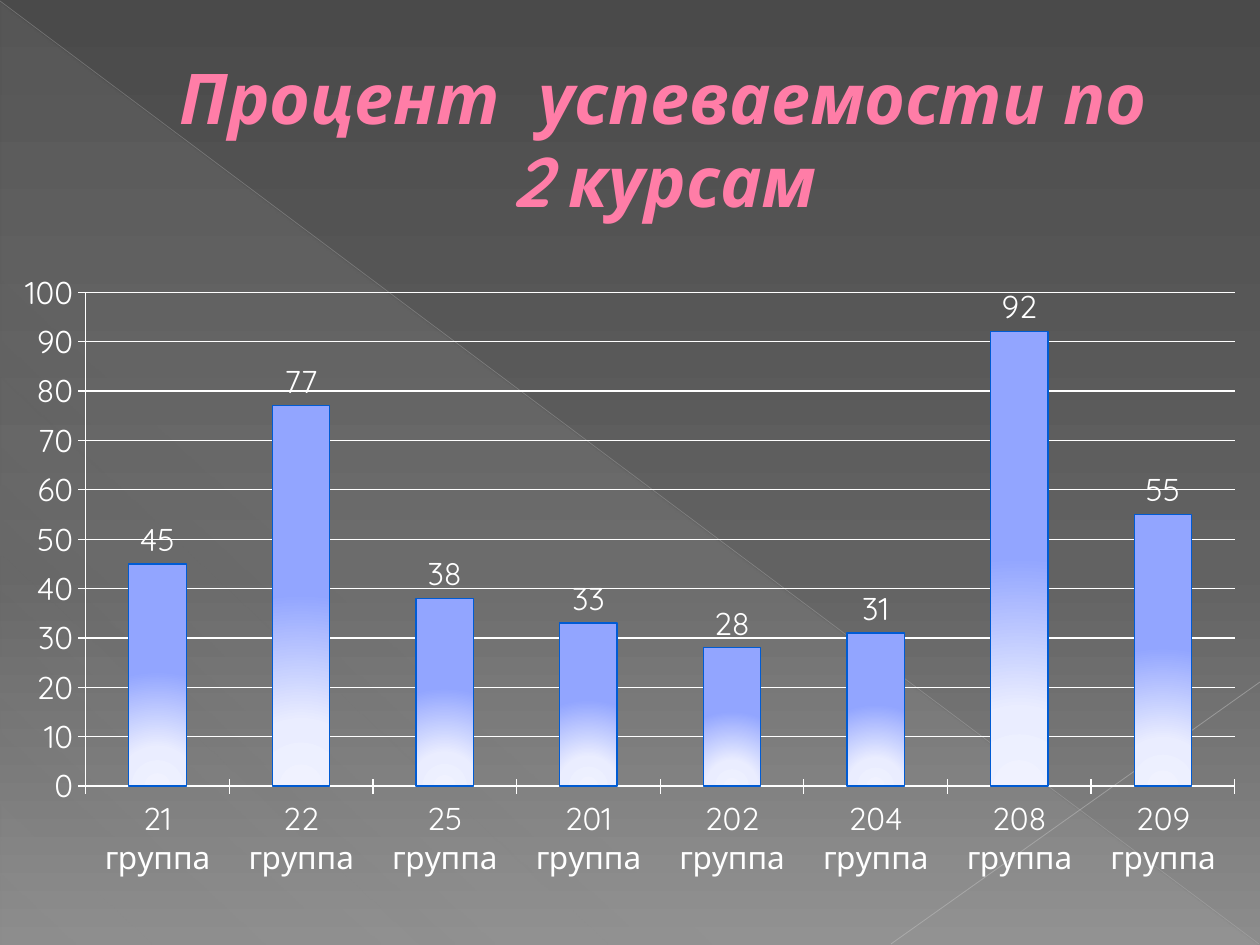
from lxml.etree import SubElement as Sub
from pptx import Presentation
from pptx.chart.data import CategoryChartData as Data
from pptx.dml.color import RGBColor
from pptx.enum.chart import XL_CHART_TYPE as Kind, XL_LABEL_POSITION as Place, XL_TICK_MARK as Tick
from pptx.enum.shapes import MSO_CONNECTOR as Link, MSO_SHAPE as Form
from pptx.enum.text import MSO_ANCHOR as Anchor, PP_ALIGN as Align
from pptx.oxml.ns import qn
from pptx.util import Pt

SCALE = 914400 / 126
FONT = "Quicksand"
WHITE = "FFFFFF"
MARKS = {"21": 45, "22": 77, "25": 38, "201": 33, "202": 28, "204": 31, "208": 92, "209": 55}


def px(*nums):
    return [round(n * SCALE) for n in nums]


def rgb(code):
    return RGBColor.from_string(code)


def style(item, form):
    for name, value in form.items():
        setattr(item, name, value)


def tint(parent, code, alpha=100):
    color = Sub(parent, qn("a:srgbClr"), val=code)
    if alpha < 100:
        Sub(color, qn("a:alpha"), val=str(alpha * 1000))


def blend(fill, root, stops, angle=None, focus=None):
    """Gradient of (position, colour, alpha), straight or round."""
    fill.gradient()
    grad = root.find(".//" + qn("a:gradFill"))
    for child in list(grad):
        grad.remove(child)
    row = Sub(grad, qn("a:gsLst"))
    for pos, *color in stops:
        tint(Sub(row, qn("a:gs"), pos=str(pos * 1000)), *color)
    if focus:
        ring = Sub(grad, qn("a:path"), path="circle")
        sides = {side: str(n * 1000) for side, n in zip("ltrb", focus)}
        Sub(ring, qn("a:fillToRect"), **sides)
    else:
        Sub(grad, qn("a:lin"), ang=str(angle * 60000), scaled="0")


def add_wedge(slide):
    wedge = slide.shapes.add_shape(Form.RIGHT_TRIANGLE, *px(1, 3, 1257, 942))
    wedge.shadow.inherit = False
    wedge.line.fill.background()
    stops = [(0, "D2D2D2", 10), (70, "D2D2D2", 8), (100, "D2D2D2", 1)]
    blend(wedge.fill, wedge.element.spPr, stops, angle=133)


def add_line(slide, ends, code, width, alpha):
    line = slide.shapes.add_connector(Link.STRAIGHT, *px(*ends))
    line.line.width = Pt(width)
    line.line.color.rgb = rgb(code)
    props = line.element.spPr
    Sub(props.find(".//" + qn("a:srgbClr")), qn("a:alpha"), val=str(alpha * 1000))
    Sub(props, qn("a:effectLst"))


def add_title(slide, lines):
    frame = slide.shapes.add_textbox(*px(0, 59, 1260, 158)).text_frame
    style(frame, {"word_wrap": True, "vertical_anchor": Anchor.MIDDLE})
    para = frame.paragraphs[0]
    para.alignment = Align.CENTER
    para._p.get_or_add_pPr().set("marL", str(px(67)[0]))
    for num, text in enumerate(lines):
        if num:
            para.add_line_break()
        run = para.add_run()
        run.text = text
        style(run.font, {"name": FONT, "size": Pt(40), "bold": True, "italic": True})
        run.font.color.rgb = rgb("FF7DA7")
        # Thin dark outline of the letters
        edge = run.font._element.makeelement(qn("a:ln"), w=str(Pt(0.5)))
        tint(Sub(edge, qn("a:solidFill")), "B12761")
        run.font._element.insert(0, edge)


def add_bars(slide):
    data = Data()
    data.categories = [f"{num} группа" for num in MARKS]
    data.add_series("Series 1", list(MARKS.values()))
    chart = slide.shapes.add_chart(Kind.COLUMN_CLUSTERED, *px(0, 260, 1260, 630), data).chart
    style(chart, {"has_title": False, "has_legend": False})
    style(chart.font, {"name": FONT, "size": Pt(18)})
    chart.font.color.rgb = rgb(WHITE)

    # Axes and grid
    scale = chart.value_axis
    style(scale, {"minimum_scale": 0, "maximum_scale": 100, "major_unit": 10,
                  "has_major_gridlines": True})
    for axis in (scale, chart.category_axis):
        axis.major_tick_mark = Tick.CROSS
        axis.format.line.color.rgb = rgb(WHITE)
    scale.major_gridlines.format.line.color.rgb = rgb(WHITE)

    # Bars and their values
    plot = chart.plots[0]
    style(plot, {"gap_width": 150, "vary_by_categories": False, "has_data_labels": True})
    style(plot.data_labels, {"show_value": True, "position": Place.OUTSIDE_END})
    bars = plot.series[0]
    bars.invert_if_negative = False
    bars.format.line.color.rgb = rgb("005BD3")
    bars.format.line.width = Pt(0.75)
    stops = [(0, "F0F2FF"), (34, "EAEDFF"), (100, "92A5FF")]
    blend(bars.format.fill, bars._element, stops, focus=(50, 155, 50, -55))


def main():
    deck = Presentation()
    deck.slide_width, deck.slide_height = px(1260, 945)
    slide = deck.slides.add_slide(deck.slide_layouts[6])

    # Backdrop
    stops = [(0, "4A4A4A"), (60, "626262"), (100, "8C8C8C")]
    blend(slide.background.fill, slide.element, stops, angle=90)
    add_wedge(slide)
    add_line(slide, (0, 1, 1259, 944), "BFBFBF", 0.39, 35)
    add_line(slide, (1260, 682, 891, 944), "C6C6C6", 0.47, 45)

    # Content
    add_title(slide, ["Процент  успеваемости по", "2 курсам"])
    add_bars(slide)
    deck.save("out.pptx")


if __name__ == "__main__":
    main()
